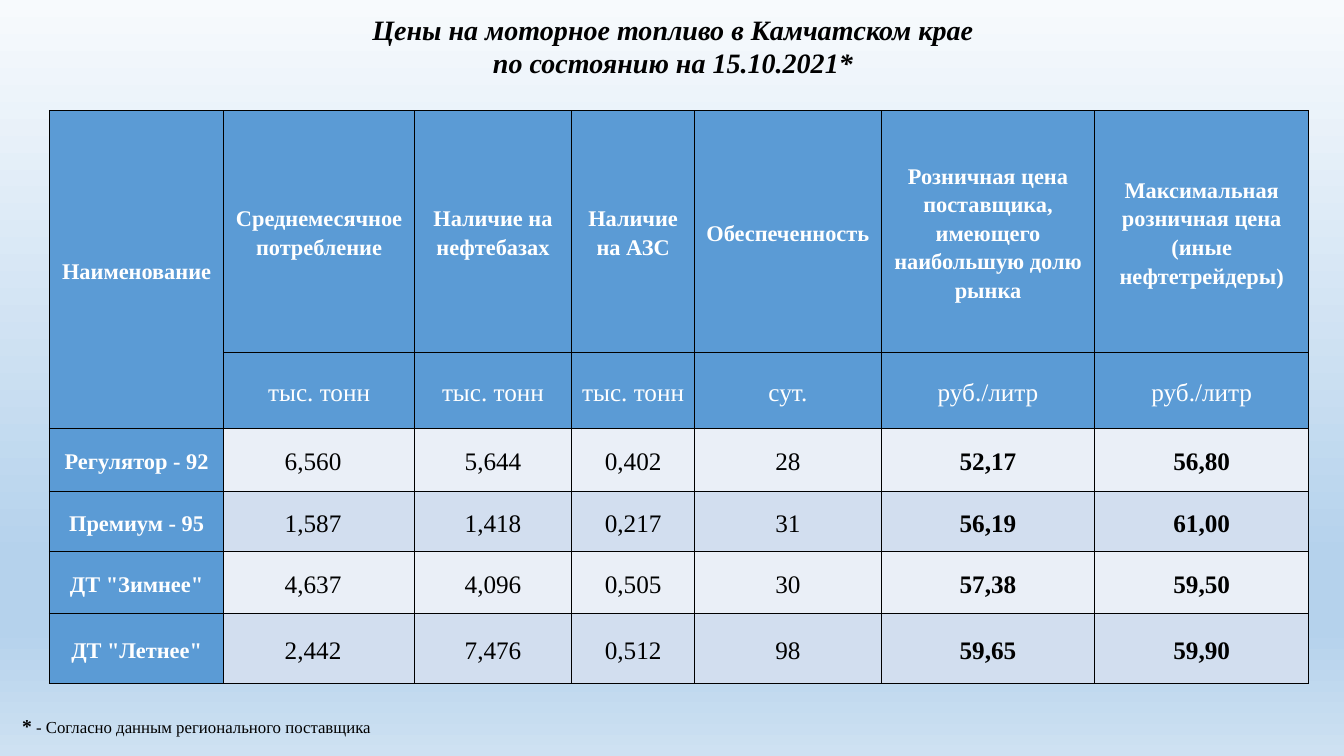
from copy import deepcopy

from lxml import etree
from pptx import Presentation
from pptx.dml.color import RGBColor
from pptx.enum import text
from pptx.oxml import ns
from pptx.util import Inches, Pt

BLUE, BLACK, WHITE = "5B9BD5", "000000", "FFFFFF"
BANDS = ("EAEFF7", "D2DEEF")
BACKGROUND = ((0, "F7FAFD"), (74, "B5D2EC"), (83, "B5D2EC"), (100, "CEE1F2"))
COLUMN_WIDTHS = (1.73, 1.89, 1.56, 1.22, 1.85, 2.12, 2.12)
ROW_HEIGHTS = (2.4, 0.75, 0.63, 0.59, 0.62, 0.69)
ROWS = (
    ("Наименование", "Среднемесячное потребление", "Наличие на нефтебазах",
     "Наличие на АЗС", "Обеспеченность",
     "Розничная цена поставщика, имеющего наибольшую долю рынка",
     "Максимальная розничная цена\n(иные нефтетрейдеры)"),
    ("", "тыс. тонн", "тыс. тонн", "тыс. тонн", "сут.", "руб./литр", "руб./литр"),
    ("Регулятор - 92", "6,560", "5,644", "0,402", "28", "52,17", "56,80"),
    ("Премиум - 95", "1,587", "1,418", "0,217", "31", "56,19", "61,00"),
    ('ДТ "Зимнее"', "4,637", "4,096", "0,505", "30", "57,38", "59,50"),
    ('ДТ "Летнее"', "2,442", "7,476", "0,512", "98", "59,65", "59,90"),
)
HEADER_ROWS = 2
FIRST_PRICE_COLUMN = 5


def color(value):
    return RGBColor.from_string(value)


def set_values(target, values):
    for name, value in values.items():
        setattr(target, name, value)


class PriceSlide:
    font_name = "Times New Roman"

    def __init__(self, presentation):
        self.slide = presentation.slides.add_slide(presentation.slide_layouts[5])

    def format_font(self, font, size, hex_color=BLACK, bold=False, italic=False):
        set_values(font, {"name": self.font_name, "size": Pt(size),
                          "bold": bold, "italic": italic})
        font.color.rgb = color(hex_color)

    def add_background(self, stops):
        fill = self.slide.background.fill
        fill.gradient()
        fill.gradient_angle = 270
        stop_list = self.slide.element.find(".//" + ns.qn("a:gsLst"))
        template = deepcopy(stop_list[0])
        for old_stop in list(stop_list):
            stop_list.remove(old_stop)
        for _ in stops:
            stop_list.append(deepcopy(template))
        for stop, (percent, hex_color) in zip(fill.gradient_stops, stops):
            stop.position = percent / 100
            stop.color.rgb = color(hex_color)

    def add_title(self, lines, left, top, width, height):
        title = self.slide.shapes.title
        set_values(title, {"left": Inches(left), "top": Inches(top),
                           "width": Inches(width), "height": Inches(height)})
        frame = title.text_frame
        frame.text = lines
        set_values(frame, {"vertical_anchor": text.MSO_ANCHOR.TOP,
                           "auto_size": text.MSO_AUTO_SIZE.NONE, "word_wrap": True})
        for paragraph in frame.paragraphs:
            paragraph.alignment = text.PP_ALIGN.CENTER
            self.format_font(paragraph.runs[0].font, 20, bold=True, italic=True)

    def add_footnote(self, mark, note, left, top, width, height):
        box = self.slide.shapes.add_textbox(
            Inches(left), Inches(top), Inches(width), Inches(height))
        box.text_frame.word_wrap = True
        paragraph = box.text_frame.paragraphs[0]
        for wording, size, bold in ((mark, 14, True), (note, 12, False)):
            run = paragraph.add_run()
            run.text = wording
            self.format_font(run.font, size, bold=bold)

    def add_borders(self, cell):
        properties = cell._tc.get_or_add_tcPr()
        for side in ("L", "R", "T", "B"):
            line = etree.SubElement(properties, ns.qn("a:ln" + side), w=str(Pt(1)))
            fill = etree.SubElement(line, ns.qn("a:solidFill"))
            etree.SubElement(fill, ns.qn("a:srgbClr"), val=BLACK)

    def fill_cell(self, cell, wording, row, column):
        header = row < HEADER_ROWS or column == 0
        label = row == 0 or column == 0
        # Consumption figures sit slightly left of the column centre.
        shift = 0.12 if column == 1 and not header else 0
        self.add_borders(cell)
        cell.fill.solid()
        cell.fill.fore_color.rgb = color(BLUE if header else BANDS[row % 2])
        set_values(cell, {"margin_left": Inches(0.07), "margin_top": 0,
                          "margin_right": Inches(0.07 + shift), "margin_bottom": 0,
                          "vertical_anchor": text.MSO_ANCHOR.MIDDLE})
        cell.text = wording
        price = not header and column >= FIRST_PRICE_COLUMN
        for paragraph in cell.text_frame.paragraphs:
            set_values(paragraph, {"alignment": text.PP_ALIGN.CENTER,
                                   "line_spacing": 1.15})
            for run in paragraph.runs:
                self.format_font(run.font, 16 if label else 18,
                                 WHITE if header else BLACK, label or price)

    def add_price_table(self, rows, left, top):
        table = self.slide.shapes.add_table(
            len(rows), len(COLUMN_WIDTHS), Inches(left), Inches(top),
            Inches(sum(COLUMN_WIDTHS)), Inches(sum(ROW_HEIGHTS))).table
        for column, width in zip(table.columns, COLUMN_WIDTHS):
            column.width = Inches(width)
        for table_row, height in zip(table.rows, ROW_HEIGHTS):
            table_row.height = Inches(height)
        for row, values in enumerate(rows):
            for column, wording in enumerate(values):
                self.fill_cell(table.cell(row, column), wording, row, column)
        table.cell(0, 0).merge(table.cell(1, 0))


def main():
    presentation = Presentation()
    presentation.slide_width = Inches(13.33)
    presentation.slide_height = Inches(7.5)
    prices = PriceSlide(presentation)
    prices.add_background(BACKGROUND)
    prices.add_price_table(ROWS, 0.49, 1.1)
    prices.add_title("Цены на моторное топливо в Камчатском крае\n"
                     "по состоянию на 15.10.2021*", 1.32, 0.07, 10.71, 0.77)
    prices.add_footnote("*", " - Согласно данным регионального поставщика",
                        0.12, 7.03, 5.98, 0.34)
    presentation.save("out.pptx")


if __name__ == "__main__":
    main()
